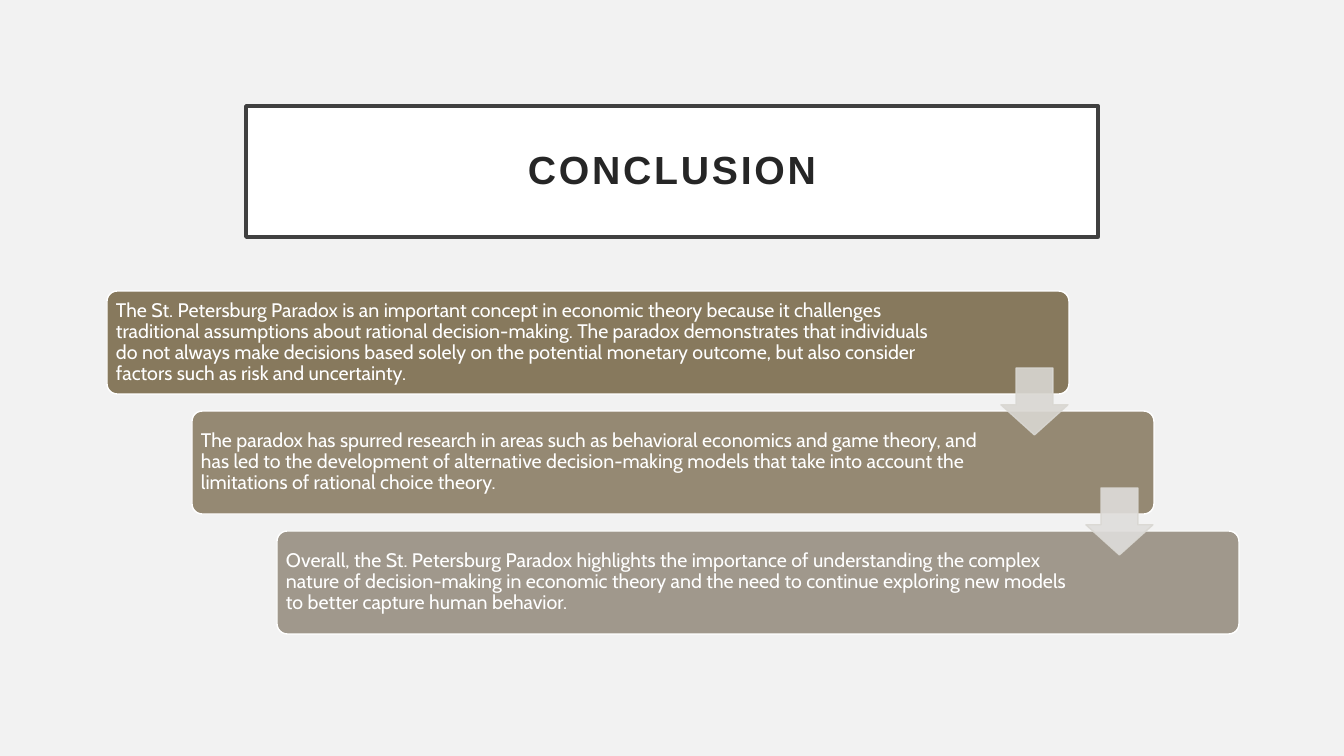
from lxml.etree import SubElement
from pptx import Presentation
from pptx.dml.color import RGBColor
from pptx.enum.shapes import MSO_SHAPE as Shape
from pptx.enum.text import MSO_ANCHOR as Anchor, PP_ALIGN as Align
from pptx.oxml.ns import qn
from pptx.util import Pt

PX = 914400 / 100.8
BACKGROUND = RGBColor(0xF2, 0xF2, 0xF2)
WHITE = RGBColor(0xFF, 0xFF, 0xFF)
FRAME = RGBColor(0x40, 0x40, 0x40)
TITLE_INK = RGBColor(0x26, 0x26, 0x26)
ARROW_EDGE = RGBColor(0xD9, 0xD7, 0xD2)
ARROW_FILLS = [ARROW_EDGE, RGBColor(0xDF, 0xDD, 0xDB)]
STEP_X, STEP_Y = 85, 120

CONCLUSIONS = [
    (RGBColor(0x87, 0x79, 0x5D), 851,
     "The St. Petersburg Paradox is an important concept in economic theory because it "
     "challenges traditional assumptions about rational decision-making. The paradox "
     "demonstrates that individuals do not always make decisions based solely on the "
     "potential monetary outcome, but also consider factors such as risk and uncertainty."),
    (RGBColor(0x95, 0x89, 0x73), 803,
     "The paradox has spurred research in areas such as behavioral economics and game "
     "theory, and has led to the development of alternative decision-making models that "
     "take into account the limitations of rational choice theory."),
    (RGBColor(0xA0, 0x98, 0x8C), 803,
     "Overall, the St. Petersburg Paradox highlights the importance of understanding the "
     "complex nature of decision-making in economic theory and the need to continue "
     "exploring new models to better capture human behavior."),
]


def add_block(kind, box, fill, edge, edge_width):
    block = slide.shapes.add_shape(kind, *(round(length * PX) for length in box))
    block.shadow.inherit = False
    block.fill.solid()
    block.fill.fore_color.rgb = fill
    block.line.color.rgb = edge
    block.line.width = Pt(edge_width)
    return block


def write_text(holder, text, inset, size, font_name, color):
    frame = holder.text_frame
    frame.word_wrap = True
    frame.vertical_anchor = Anchor.MIDDLE
    frame.margin_left = frame.margin_right = round(inset * PX)
    frame.margin_top = frame.margin_bottom = round(inset * PX)
    paragraph = frame.paragraphs[0]
    paragraph.text = text
    paragraph.line_spacing = 0.9
    paragraph.font.size = Pt(size)
    paragraph.font.name = font_name
    paragraph.font.color.rgb = color
    return paragraph


deck = Presentation()
deck.slide_width = round(1344 * PX)
deck.slide_height = round(756 * PX)
slide = deck.slides.add_slide(deck.slide_layouts[6])
slide.background.fill.solid()
slide.background.fill.fore_color.rgb = BACKGROUND

title = add_block(Shape.RECTANGLE, (246, 106, 852, 131), WHITE, FRAME, 2.5)
heading = write_text(title, "CONCLUSION", 20, 28, "Arial", TITLE_INK)
heading.alignment = Align.CENTER
heading.font.bold = True
heading.runs[0]._r.get_or_add_rPr().set("spc", "200")

for step, (fill, text_width, text) in enumerate(CONCLUSIONS):
    left, top = 107 + step * STEP_X, 291 + step * STEP_Y
    card = add_block(Shape.ROUNDED_RECTANGLE, (left, top, 962, 103), fill, WHITE, 1)
    card.adjustments[0] = 0.1
    text_box = (left + 3, top + 3, text_width, 97)
    statement = slide.shapes.add_textbox(*(round(length * PX) for length in text_box))
    write_text(statement, text, 6, 14, "Cabin", WHITE)

for step, fill in enumerate(ARROW_FILLS):
    arrow_box = (1001 + step * STEP_X, 368 + step * STEP_Y, 67, 67)
    arrow = add_block(Shape.DOWN_ARROW, arrow_box, fill, ARROW_EDGE, 1)
    arrow.adjustments[0] = 0.55
    arrow.adjustments[1] = 0.45
    for color in arrow._element.spPr.iter(qn("a:srgbClr")):
        SubElement(color, qn("a:alpha"), val="90000")

deck.save("out.pptx")
